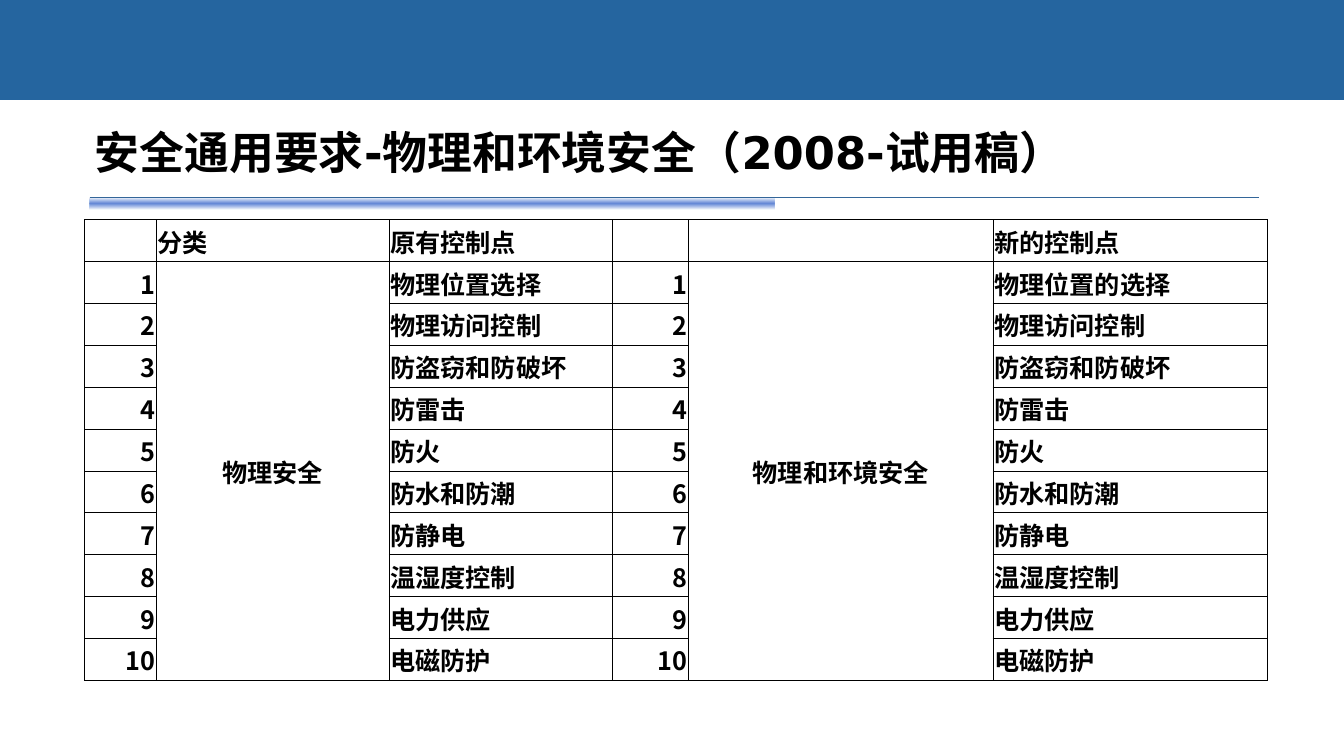
from lxml.etree import SubElement
from pptx import Presentation
from pptx.dml.color import RGBColor
from pptx.enum.shapes import MSO_CONNECTOR as Connector, MSO_SHAPE as Shape
from pptx.enum.text import MSO_ANCHOR as Anchor, MSO_AUTO_SIZE as AutoSize, PP_ALIGN as Align
from pptx.oxml import parse_xml
from pptx.oxml.ns import nsdecls, qn
from pptx.util import Inches, Pt

# Content
TITLE = "安全通用要求-物理和环境安全（2008-试用稿）"
HEADERS = ["", "分类", "原有控制点", "", "", "新的控制点"]
OLD_CATEGORY, NEW_CATEGORY = "物理安全", "物理和环境安全"
CONTROLS = [
    ("物理位置选择", "物理位置的选择"),
    ("物理访问控制", "物理访问控制"),
    ("防盗窃和防破坏", "防盗窃和防破坏"),
    ("防雷击", "防雷击"),
    ("防火", "防火"),
    ("防水和防潮", "防水和防潮"),
    ("防静电", "防静电"),
    ("温湿度控制", "温湿度控制"),
    ("电力供应", "电力供应"),
    ("电磁防护", "电磁防护"),
]

# Theme and layout
THEME = {
    "band": "25659F", "rule": "336699", "glow_edge": "5781D5", "glow_middle": "6387D6",
    "text": "000000", "border": "000000",
    "title_font": "DejaVu Sans", "table_font": "Noto Sans CJK SC",
    "title_size": 32, "table_size": 18, "rule_width": 0.75, "border_width": 0.5,
}
COLUMN_WIDTHS = [0.71, 2.31, 2.21, 0.76, 3.02, 2.72]
COLUMN_ALIGNS = [Align.RIGHT, Align.CENTER, Align.LEFT] * 2
CATEGORY_COLUMNS = (1, 4)
TABLE_LEFT, TABLE_TOP, TABLE_HEIGHT = 0.84, 2.18, 4.57
RULE_LEFT, RULE_RIGHT, RULE_TOP = 0.89, 12.49, 1.96


def color(name):
    return RGBColor.from_string(THEME[name])


def set_values(target, values):
    for name, value in values.items():
        setattr(target, name, value)


def write(para, text, kind):
    span = para.add_run()
    span.text = text
    set_values(span.font, {"name": THEME[f"{kind}_font"], "size": Pt(THEME[f"{kind}_size"]),
                           "bold": True})
    span.font.color.rgb = color("text")
    east_asian = SubElement(span.font._element, qn("a:ea"))
    east_asian.set("typeface", THEME["table_font"])


def add_rectangle(slide, *bounds):
    box = slide.shapes.add_shape(Shape.RECTANGLE, *map(Inches, bounds))
    box.shadow.inherit = False
    box.line.fill.background()
    return box


def add_decoration(slide):
    # Underline glow, fading out at its upper and lower edges
    glow = add_rectangle(slide, RULE_LEFT, RULE_TOP, 6.79, 0.12)
    stops = "".join(
        f'<a:gs pos="{position}"><a:srgbClr val="{THEME[name]}">'
        f'<a:alpha val="{alpha}"/></a:srgbClr></a:gs>'
        for position, name, alpha in [(0, "glow_edge", 0), (50000, "glow_middle", 100000),
                                      (100000, "glow_edge", 0)])
    gradient = parse_xml(f'<a:gradFill {nsdecls("a")} rotWithShape="1"><a:gsLst>{stops}</a:gsLst>'
                         '<a:lin ang="5400000" scaled="0"/></a:gradFill>')
    glow._element.spPr.find(qn("a:prstGeom")).addnext(gradient)

    # Thin rule
    rule = slide.shapes.add_connector(Connector.STRAIGHT, *map(
        Inches, (RULE_LEFT, RULE_TOP, RULE_RIGHT, RULE_TOP)))
    rule.line.color.rgb = color("rule")
    rule.line.width = Pt(THEME["rule_width"])
    SubElement(rule._element.spPr, qn("a:effectLst"))

    # Top band
    band = add_rectangle(slide, 0, 0, 13.33, 0.99)
    band.fill.solid()
    band.fill.fore_color.rgb = color("band")


def add_title(slide):
    title = slide.shapes.title
    set_values(title, {"left": Inches(0.84), "top": Inches(0.44),
                       "width": Inches(10.27), "height": Inches(1.33)})
    set_values(title.text_frame, {
        "word_wrap": True, "auto_size": AutoSize.NONE, "vertical_anchor": Anchor.BOTTOM,
        "margin_left": Inches(0.1), "margin_right": Inches(0.1),
        "margin_top": 0, "margin_bottom": 0})
    para = title.text_frame.paragraphs[0]
    para.alignment = Align.LEFT
    write(para, TITLE, "title")
    slide.shapes._spTree.append(title._element)


def format_cell(cell):
    set_values(cell, {"vertical_anchor": Anchor.MIDDLE, "margin_left": Inches(0.01),
                      "margin_right": Inches(0.01), "margin_top": Inches(0.01),
                      "margin_bottom": 0})
    properties = cell._tc.get_or_add_tcPr()
    for side in "LRTB":
        properties.append(parse_xml(
            f'<a:ln{side} {nsdecls("a")} w="{Pt(THEME["border_width"])}"><a:solidFill>'
            f'<a:srgbClr val="{THEME["border"]}"/></a:solidFill></a:ln{side}>'))
    cell.fill.background()


def add_controls_table(slide):
    rows = [HEADERS]
    for number, (old, new) in enumerate(CONTROLS, 1):
        first = number == 1
        rows.append([str(number), OLD_CATEGORY if first else "", old,
                     str(number), NEW_CATEGORY if first else "", new])
    frame = slide.shapes.add_table(len(rows), len(HEADERS), *map(
        Inches, (TABLE_LEFT, TABLE_TOP, sum(COLUMN_WIDTHS), TABLE_HEIGHT)))
    table = frame.table
    set_values(table, {"first_row": False, "horz_banding": False})
    for column, width in zip(table.columns, COLUMN_WIDTHS):
        column.width = Inches(width)
    for row in table.rows:
        row.height = Inches(TABLE_HEIGHT / len(rows))
    for row_index, texts in enumerate(rows):
        for column_index, text in enumerate(texts):
            cell = table.cell(row_index, column_index)
            format_cell(cell)
            if text:
                para = cell.text_frame.paragraphs[0]
                para.alignment = COLUMN_ALIGNS[column_index] if row_index else Align.LEFT
                write(para, text, "table")
    for column_index in CATEGORY_COLUMNS:
        table.cell(1, column_index).merge(table.cell(len(CONTROLS), column_index))


def main():
    deck = Presentation()
    set_values(deck, {"slide_width": Inches(13.33), "slide_height": Inches(7.5)})
    page = deck.slides.add_slide(deck.slide_layouts[5])
    add_decoration(page)
    add_title(page)
    add_controls_table(page)
    deck.save("out.pptx")


if __name__ == "__main__":
    main()
